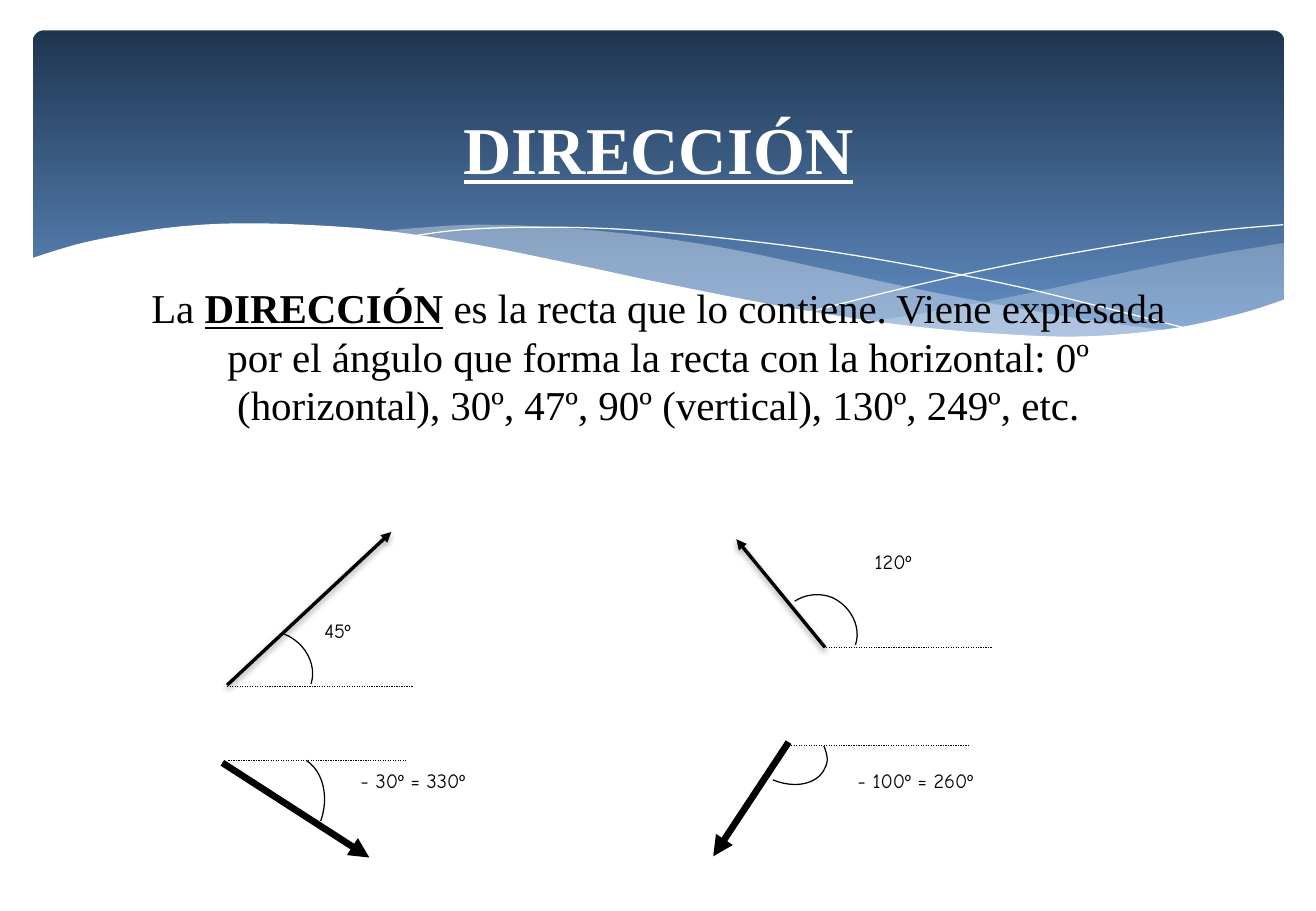
from lxml.etree import SubElement as Sub
from pptx import Presentation
from pptx.dml.color import RGBColor as RGB
from pptx.enum.dml import MSO_LINE as Dash
from pptx.enum.shapes import MSO_CONNECTOR as Link, MSO_SHAPE as Kind
from pptx.enum.text import MSO_ANCHOR as Anchor, PP_ALIGN as Align
from pptx.oxml.ns import qn
from pptx.util import Cm, Pt

WHITE = RGB(0xFF, 0xFF, 0xFF)
BLACK = RGB(0x00, 0x00, 0x00)
NAVY = RGB(0x1E, 0x35, 0x50)
BLUE = RGB(0x60, 0x8D, 0xC3)
MIST = RGB(0xE7, 0xED, 0xF5)
SERIF = "Times New Roman"
HAND = "Comic Neue"

RIGHT = [
    [(10.3, 1.75), (9.7, 1.85), (9.05, 1.98), (8.17, 2.17), (7.38, 2.32), (6.89, 2.4)],
    [(6.89, 2.4), (7.8, 2.5), (8.55, 2.53), (9.27, 2.48), (9.86, 2.37), (10.3, 2.22)],
]
MIDDLE = [
    [(9.4, 2.48), (8.47, 2.35), (7.38, 2.15), (6.54, 1.97), (5.74, 1.8),
     (5.02, 1.69), (4.28, 1.62), (3.64, 1.6), (3.12, 1.63), (2.83, 1.66)],
    [(2.83, 1.66), (3.65, 1.78), (4.6, 1.97), (5.87, 2.23), (6.77, 2.39),
     (7.56, 2.49), (8.35, 2.53), (9.02, 2.51), (9.4, 2.48)],
]
FALL = [[(3.08, 1.7), (3.55, 1.64), (4.24, 1.62), (5.03, 1.65), (6.03, 1.75),
         (6.93, 1.88), (7.97, 2.08), (8.73, 2.26), (9.56, 2.47)]]
RISE = [[(6.38, 2.32), (7.26, 2.1), (8.14, 1.91), (9.11, 1.74), (9.74, 1.65), (10.29, 1.6)]]
FRONT = [
    [(10.32, 2.21), (9.91, 2.34), (9.34, 2.46), (8.65, 2.52), (7.98, 2.5), (7.19, 2.43),
     (6.26, 2.29), (5.18, 2.08), (4.57, 1.95), (3.68, 1.77), (2.9, 1.65), (2.22, 1.6),
     (1.64, 1.59), (1.16, 1.62), (0.76, 1.68), (0.37, 1.76), (-0.02, 1.88)],
    [(-0.02, 3.04), (10.32, 3.04)],
]

ANGLES = [
    ((1.87, 5.64), (1.35, -1.26), (0, 0.01, 1.53),
     [(0.47, -0.42), (0.64, -0.35), (0.74, -0.17), (0.69, -0.01)],
     "45º", (0.7, -0.6, 0.99), 2),
    ((6.79, 5.33), (-0.73, -0.89), (0.01, 0, 1.37),
     [(-0.25, -0.38), (-0.16, -0.44), (-0.04, -0.45), (0.06, -0.41),
      (0.21, -0.34), (0.3, -0.17), (0.25, -0.02)],
     "120º", (0.31, -0.86, 0.89), 2),
    ((1.83, 6.28), (1.21, 0.78), (0.05, -0.02, 1.46),
     [(0.69, -0.02), (0.83, 0.07), (0.88, 0.28), (0.81, 0.48)],
     "- 30º = 330º", (1.04, 0, 1.8), 4),
    ((6.49, 6.11), (-0.62, 0.94), (-0.04, 0.03, 1.52),
     [(0.29, 0.03), (0.32, 0.1), (0.33, 0.16), (0.3, 0.21),
      (0.25, 0.34), (0.06, 0.39), (-0.13, 0.31)],
     "- 100º = 260º", (0.47, 0.17, 2.23), 4),
]


def inch(num):
    return Cm(2.54 * num)


def bezier(ctrl, steps=12):
    pts = [ctrl[0]]
    for i in range(0, len(ctrl) - 1, 3):
        a, b, c, d = ctrl[i:i + 4]
        for n in range(1, steps + 1):
            t = n / steps
            s = 1 - t
            pts.append(tuple(s**3 * p + 3 * s * s * t * q + 3 * s * t * t * r + t**3 * e
                             for p, q, r, e in zip(a, b, c, d)))
    return pts


def smooth(knots):
    ends = [knots[0], *knots, knots[-1]]
    ctrl = [knots[0]]
    for a, b, c, d in zip(ends, ends[1:], ends[2:], ends[3:]):
        ctrl += [tuple(q + (r - p) / 6 for p, q, r in zip(a, b, c)),
                 tuple(r - (e - q) / 6 for q, r, e in zip(b, c, d)), c]
    return bezier(ctrl, 6)


def outline(slide, left, top, pts, fill=None, alpha=100, line=None, width=0):
    spots = [(inch(left + x), inch(top + y)) for x, y in pts]
    pen = slide.shapes.build_freeform(*spots[0], scale=1.0)
    pen.add_line_segments(spots[1:], close=fill is not None)
    shape = pen.convert_to_shape()
    shape.shadow.inherit = False
    if fill is None:
        shape.fill.background()
    else:
        shape.fill.solid()
        shape.fill.fore_color.rgb = fill
        tint = shape.element.spPr.find(".//" + qn("a:srgbClr"))
        Sub(tint, qn("a:alpha"), val=str(alpha * 1000))
    if line is None:
        shape.line.fill.background()
    else:
        shape.line.color.rgb = line
        shape.line.width = Pt(width)


def stroke(slide, start, end, width, dash=None, arrow=False, shade=False):
    spots = [inch(n) for n in (*start, *end)]
    link = slide.shapes.add_connector(Link.STRAIGHT, *spots)
    link.line.color.rgb = BLACK
    link.line.width = Pt(width)
    if dash:
        link.line.dash_style = dash
    props = link.element.spPr
    if arrow:
        Sub(props.find(qn("a:ln")), qn("a:tailEnd"), type="triangle")
    glow = Sub(props, qn("a:effectLst"))
    if shade:
        cast = Sub(glow, qn("a:outerShdw"), blurRad=str(Pt(4)), dist=str(Pt(2)),
                   dir="5400000", rotWithShape="0")
        tint = Sub(cast, qn("a:srgbClr"), val=str(BLACK))
        Sub(tint, qn("a:alpha"), val="38000")


def write(para, text, font, size, color, strong=False):
    run = para.add_run()
    run.text = text
    run.font.name = font
    run.font.size = Pt(size)
    run.font.color.rgb = color
    run.font.bold = run.font.underline = strong


def banner(slide, left, top, width, height):
    card = slide.shapes.add_shape(Kind.ROUNDED_RECTANGLE, *map(inch, (left, top, width, height)))
    card.adjustments[0] = 0.034
    card.shadow.inherit = False
    card.line.fill.background()
    card.fill.gradient()
    card.fill.gradient_angle = 270
    for stop, spot, color in zip(card.fill.gradient_stops, (0, 0.9), (NAVY, BLUE)):
        stop.position = spot
        stop.color.rgb = color
    for runs, look in (
        (RIGHT, {"fill": MIST, "alpha": 29}),
        (MIDDLE, {"fill": MIST, "alpha": 40}),
        (FALL, {"line": WHITE}),
        (RISE, {"line": WHITE}),
        (FRONT, {"fill": WHITE}),
    ):
        pts = [p for knots in runs for p in smooth(knots)]
        outline(slide, left, top, pts, **look)


def heading(slide, left, top, width, height):
    frame = slide.shapes.add_textbox(*map(inch, (left, top, width, height))).text_frame
    frame.word_wrap = True
    frame.vertical_anchor = Anchor.MIDDLE
    frame.margin_top, frame.margin_bottom = inch(0.07), 0
    title, body = frame.paragraphs[0], frame.add_paragraph()
    title.alignment = body.alignment = Align.CENTER
    write(title, "DIRECCIÓN", SERIF, 39.6, WHITE, True)
    body.space_before = Pt(56)
    body.line_spacing = Pt(29)
    for text, strong in (
        ("La ", False),
        ("DIRECCIÓN", True),
        (" es la recta que lo contiene. Viene expresada por el ángulo que forma la recta "
         "con la horizontal: 0º (horizontal), 30º, 47º, 90º (vertical), 130º, 249º, etc.", False),
    ):
        write(body, text, SERIF, 24.3, BLACK, strong)


def angle(slide, corner, tip, base, curve, text, label, weight):
    x, y = corner
    stroke(slide, corner, (x + tip[0], y + tip[1]), weight, arrow=True, shade=weight == 2)
    dx, dy, span = base
    stroke(slide, (x + dx, y + dy), (x + dx + span, y + dy), 0.75, Dash.ROUND_DOT)
    outline(slide, x, y, bezier(curve), line=BLACK, width=0.75)
    dx, dy, span = label
    frame = slide.shapes.add_textbox(*map(inch, (x + dx, y + dy, span, 0.3))).text_frame
    frame.word_wrap = True
    write(frame.paragraphs[0], text, HAND, 12, BLACK)


def main():
    deck = Presentation()
    deck.slide_width, deck.slide_height = inch(10.83), inch(7.5)
    slide = deck.slides.add_slide(deck.slide_layouts[6])
    banner(slide, 0.27, 0.25, 10.3, 2.7)
    heading(slide, 0.92, 1.55, 9, 1.25)
    for parts in ANGLES:
        angle(slide, *parts)
    deck.save("out.pptx")


if __name__ == "__main__":
    main()
